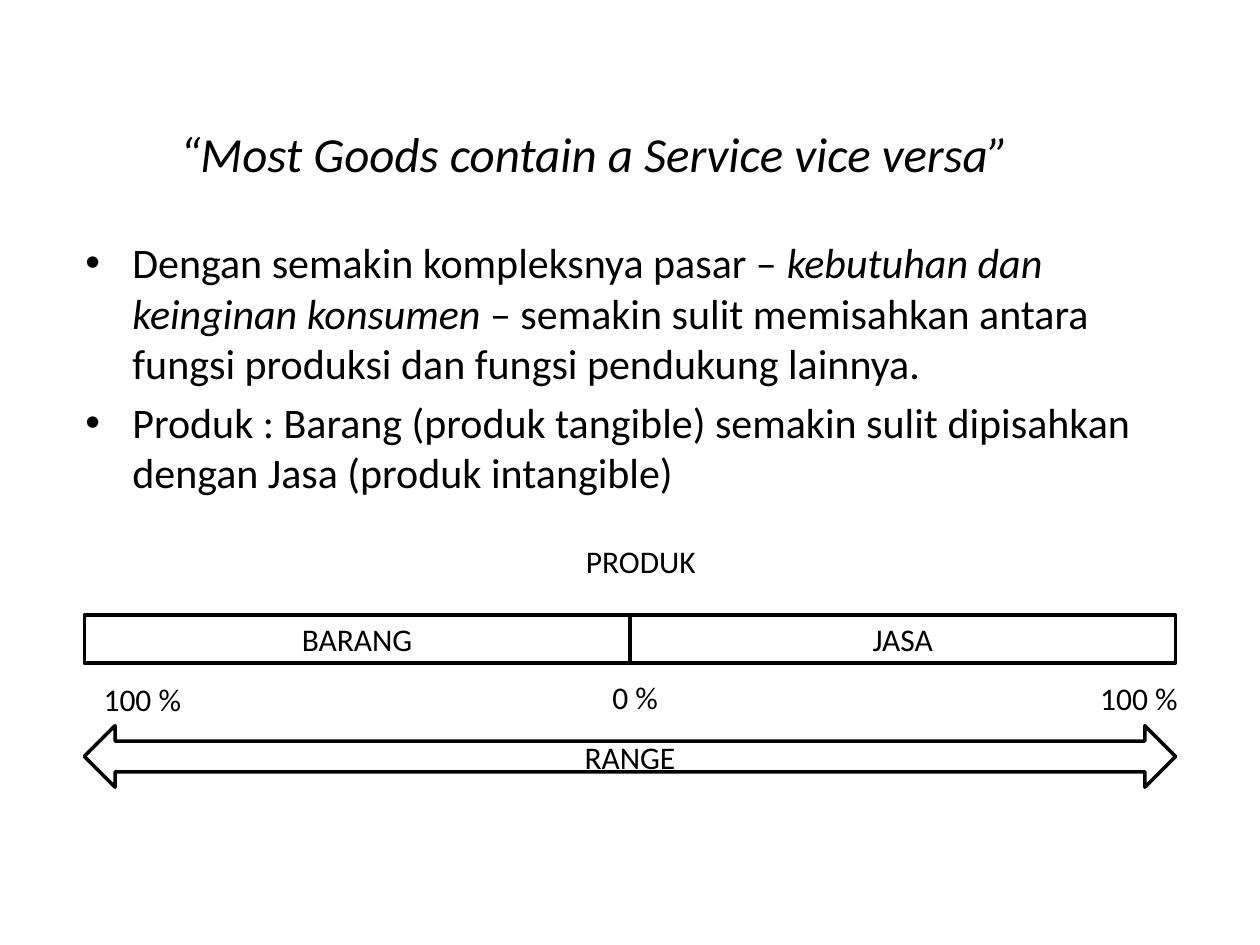
from lxml import etree
from pptx import Presentation
from pptx.dml.color import RGBColor
from pptx.enum.shapes import MSO_SHAPE
from pptx.enum.text import MSO_ANCHOR, MSO_AUTO_SIZE, PP_ALIGN
from pptx.oxml.ns import qn
from pptx.util import Cm, Pt

RECT = MSO_SHAPE.RECTANGLE
ARROW = MSO_SHAPE.LEFT_RIGHT_ARROW
CENTER = PP_ALIGN.CENTER
LEFT = PP_ALIGN.LEFT
MIDDLE = MSO_ANCHOR.MIDDLE
FIT = MSO_AUTO_SIZE.SHAPE_TO_FIT_TEXT

FONT = "Calibri"
COLORS = {"ink": "000000", "paper": "FFFFFF"}

SCALE_LEFT, HALF_WIDTH = 1.7, 11
SCALE_MIDDLE = SCALE_LEFT + HALF_WIDTH

BULLETS = [
    [("Dengan semakin kompleksnya pasar – ", False),
     ("kebutuhan dan keinginan konsumen", True),
     (" – semakin sulit memisahkan antara fungsi produksi dan fungsi "
      "pendukung lainnya.", False)],
    [("Produk : Barang (produk tangible) semakin sulit dipisahkan "
      "dengan Jasa (produk intangible)", False)],
]


def color(name):
    return RGBColor.from_string(COLORS[name])


def add_run(p, text, size, italic=False):
    r = p.add_run()
    r.text = text
    r.font.name = FONT
    r.font.size = Pt(size)
    r.font.italic = italic
    r.font.color.rgb = color("ink")


def add_text(shapes, box, text, size=18, align=CENTER, italic=False):
    tf = shapes.add_textbox(*map(Cm, box)).text_frame
    tf.word_wrap = True
    tf.auto_size = FIT
    p = tf.paragraphs[0]
    p.alignment = align
    add_run(p, text, size, italic)


def add_bullets(shapes, box, items, size=24):
    tf = shapes.add_textbox(*map(Cm, box)).text_frame
    tf.word_wrap = True
    for i, runs in enumerate(items):
        p = tf.add_paragraph() if i else tf.paragraphs[0]
        if i:
            p.space_before = Pt(size * 0.2)
        pPr = p._p.get_or_add_pPr()
        pPr.set("marL", str(Cm(0.95)))
        pPr.set("indent", str(-Cm(0.95)))
        etree.SubElement(pPr, qn("a:buFont"), typeface="Arial")
        etree.SubElement(pPr, qn("a:buChar"), char="•")
        for text, italic in runs:
            add_run(p, text, size, italic)


def add_outlined(shapes, kind, box, text):
    sp = shapes.add_shape(kind, *map(Cm, box))
    sp.shadow.inherit = False
    sp.fill.solid()
    sp.fill.fore_color.rgb = color("paper")
    sp.line.color.rgb = color("ink")
    sp.line.width = Pt(2)
    tf = sp.text_frame
    tf.word_wrap = True
    tf.vertical_anchor = MIDDLE
    p = tf.paragraphs[0]
    p.alignment = CENTER
    add_run(p, text, 18)


def add_scale(shapes):
    for left, text in ((SCALE_MIDDLE, "JASA"), (SCALE_LEFT, "BARANG")):
        add_outlined(shapes, RECT, (left, 12.4, HALF_WIDTH, 0.97), text)
    add_text(shapes, (9.96, 10.8, 5.92, 1.02), "PRODUK")
    add_text(shapes, (12.07, 13.54, 1.47, 1.02), "0 %")
    add_text(shapes, (21.79, 13.56, 2.34, 1.02), "100 %")
    add_text(shapes, (SCALE_LEFT, 13.59, 2.34, 1.02), "100 %")
    add_outlined(shapes, ARROW, (SCALE_LEFT, 14.63, 2 * HALF_WIDTH, 1.24),
                 "RANGE")


def main():
    prs = Presentation()
    prs.slide_width, prs.slide_height = Cm(25.4), Cm(19.05)
    s = prs.slides.add_slide(prs.slide_layouts[6])
    add_bullets(s.shapes, (1.47, 4.65, 22.86, 6.15), BULLETS)
    add_text(s.shapes, (3.38, 2.36, 17.58, 1.45),
             "“Most Goods contain a Service vice versa”", 28, LEFT, True)
    add_scale(s.shapes.add_group_shape().shapes)
    prs.save("out.pptx")


if __name__ == "__main__":
    main()
